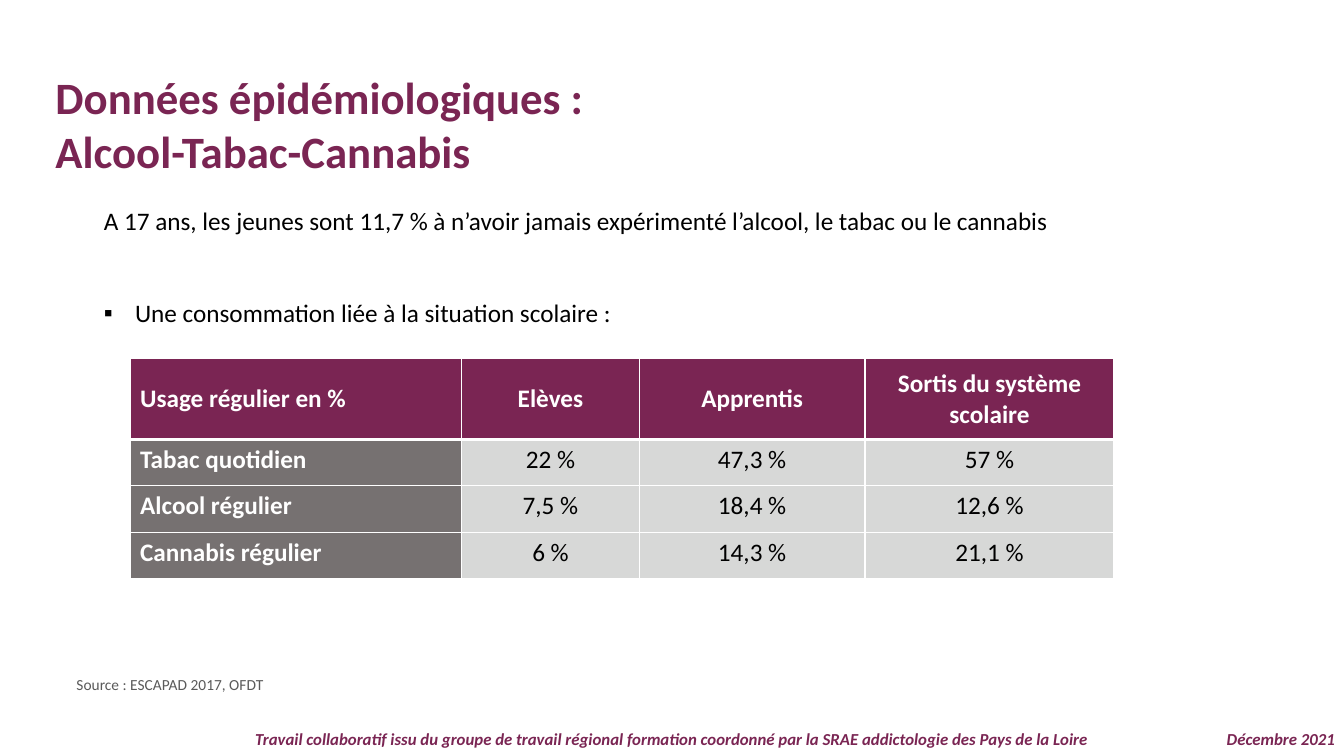
from pptx import Presentation
from pptx.dml.color import RGBColor
from pptx.enum.text import MSO_ANCHOR as Anchor, MSO_AUTO_SIZE as AutoSize, PP_ALIGN as Align
from pptx.oxml.ns import qn
from pptx.util import Inches, Pt
from lxml.etree import SubElement

COLORS = {
    "plum": "7A2553",
    "gray": "767171",
    "light": "D7D8D7",
    "source": "5A5A5A",
    "black": "000000",
    "white": "FFFFFF",
}


def rgb(name):
    return RGBColor.from_string(COLORS[name])


def write(p, text, size=18, color="black", bold=False, italic=False,
          align=Align.LEFT, spacing=1.0, before=0):
    p.alignment = align
    p.line_spacing = spacing
    p.space_before = Pt(before)
    r = p.add_run()
    r.text = text
    f = r.font
    f.name, f.size, f.bold, f.italic = "Calibri", Pt(size), bold, italic
    f.color.rgb = rgb(color)


def set_bullet(p, char=None, indent=0):
    pPr = p._p.get_or_add_pPr()
    pPr.set("marL", str(Inches(indent)))
    pPr.set("indent", str(-Inches(indent)))
    if char:
        SubElement(pPr, qn("a:buFont"), typeface="Arial")
        SubElement(pPr, qn("a:buChar"), char=char)
    else:
        SubElement(pPr, qn("a:buNone"))


def set_borders(cell, **widths):
    tcPr = cell._tc.get_or_add_tcPr()
    for side in "LRTB":
        ln = SubElement(tcPr, qn(f"a:ln{side}"), w=str(Pt(widths.get(side, 1))))
        fill = SubElement(ln, qn("a:solidFill"))
        SubElement(fill, qn("a:srgbClr"), val=COLORS["white"])


class Deck:
    def __init__(self, width, height):
        self.prs = Presentation()
        self.prs.slide_width, self.prs.slide_height = Inches(width), Inches(height)
        self.s = self.prs.slides.add_slide(self.prs.slide_layouts[1])

    def place(self, sp, box):
        sp.left, sp.top, sp.width, sp.height = map(Inches, box)
        tf = sp.text_frame
        tf.word_wrap = True
        tf.auto_size = AutoSize.NONE
        tf.vertical_anchor = Anchor.TOP
        return tf

    def title(self, box, lines):
        tf = self.place(self.s.shapes.title, box)
        for i, line in enumerate(lines):
            p = tf.add_paragraph() if i else tf.paragraphs[0]
            write(p, line, size=32, color="plum", bold=True)

    def body(self, box, items):
        tf = self.place(self.s.placeholders[1], box)
        for i, (text, bullet, indent, before) in enumerate(items):
            p = tf.add_paragraph() if i else tf.paragraphs[0]
            set_bullet(p, bullet, indent)
            write(p, text, before=before)

    def text(self, box, text, **style):
        tf = self.place(self.s.shapes.add_textbox(0, 0, 0, 0), box)
        write(tf.paragraphs[0], text, **style)

    def table(self, left, top, widths, heights, rows):
        box = map(Inches, (left, top, sum(widths), sum(heights)))
        table = self.s.shapes.add_table(len(rows), len(widths), *box).table
        table.horz_banding = False
        for column, width in zip(table.columns, widths):
            column.width = Inches(width)
        for i, (row, height) in enumerate(zip(rows, heights)):
            table.rows[i].height = Inches(height)
            for j, text in enumerate(row):
                self.cell(table.cell(i, j), i, j, text)

    def cell(self, cell, i, j, text):
        heading = i == 0 or j == 0
        set_borders(cell, T=3 if i == 1 else 1, B=3 if i == 0 else 1)
        cell.fill.solid()
        cell.fill.fore_color.rgb = rgb("plum" if i == 0 else "gray" if j == 0 else "light")
        cell.vertical_anchor = Anchor.TOP if i else Anchor.MIDDLE
        write(cell.text_frame.paragraphs[0], text, bold=heading,
              color="white" if heading else "black",
              align=Align.CENTER if j else Align.LEFT)


def main():
    deck = Deck(13.33, 7.5)
    footer = dict(size=12, color="plum", bold=True, italic=True, spacing=0.9)
    deck.text((0, 7.2, 13.33, 0.3),
              "Travail collaboratif issu du groupe de travail régional formation "
              "coordonné par la SRAE addictologie des Pays de la Loire",
              align=Align.CENTER, **footer)
    deck.text((11.9, 7.2, 1.44, 0.3), "Décembre 2021", align=Align.RIGHT, **footer)
    deck.title((0.45, 0.64, 12.97, 1.18),
               ["Données épidémiologiques :", "Alcool-Tabac-Cannabis"])
    deck.text((0.66, 6.65, 12.01, 0.29), "Source : ESCAPAD 2017, OFDT",
              size=11, color="source")
    deck.body((0.93, 1.99, 10.48, 1.31), [
        ("A 17 ans, les jeunes sont 11,7 % à n’avoir jamais expérimenté "
         "l’alcool, le tabac ou le cannabis", None, 0, 0),
        ("Une consommation liée à la situation scolaire :", "▪", 0.31, 44),
    ])
    deck.table(1.29, 3.56, [3.29, 1.76, 2.24, 2.47], [0.8] + [0.46] * 3, [
        ["Usage régulier en %", "Elèves", "Apprentis", "Sortis du système scolaire"],
        ["Tabac quotidien", "22 %", "47,3 %", "57 %"],
        ["Alcool régulier", "7,5 %", "18,4 %", "12,6 %"],
        ["Cannabis régulier", "6 %", "14,3 %", "21,1 %"],
    ])
    deck.prs.save("out.pptx")


if __name__ == "__main__":
    main()
